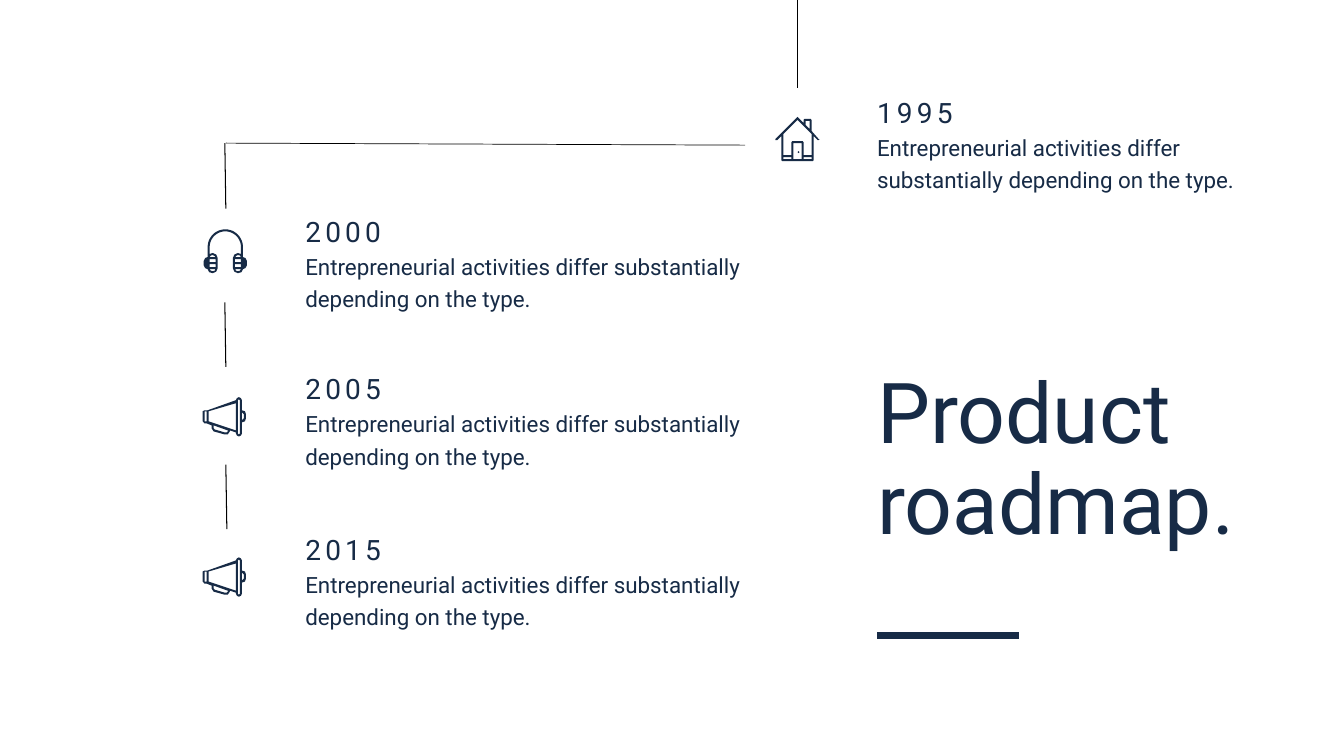
from dataclasses import dataclass
from math import cos, pi, sin

from lxml import etree
from pptx import Presentation
from pptx.dml.color import RGBColor
from pptx.enum.shapes import MSO_CONNECTOR
from pptx.enum.text import MSO_ANCHOR, MSO_AUTO_SIZE, PP_ALIGN
from pptx.oxml.ns import qn
from pptx.slide import Slide
from pptx.text.text import TextFrame
from pptx.util import Inches, Pt

STRAIGHT = MSO_CONNECTOR.STRAIGHT
TOP = MSO_ANCHOR.TOP
FIT_SHAPE = MSO_AUTO_SIZE.SHAPE_TO_FIT_TEXT
FIXED_SIZE = MSO_AUTO_SIZE.NONE
LEFT = PP_ALIGN.LEFT

COLORS = {"navy": "172B46", "black": "000000", "white": "FFFFFF"}
FONT = "Roboto"
DETAIL = "Entrepreneurial activities differ substantially depending on the type."
DETAIL_OFFSET = 0.33
ICON_UNIT = 0.01

Contour = list[tuple[float, float]]


@dataclass
class Milestone:
    year: str
    left: float
    top: float
    detail_width: float
    icon: list[Contour]
    icon_left: float
    icon_top: float


@dataclass
class Line:
    start: tuple[float, float]
    end: tuple[float, float]
    weight: float = 0.75
    color: str = "black"


def rectangle(left: float, top: float, right: float, bottom: float) -> Contour:
    return [(left, top), (right, top), (right, bottom), (left, bottom)]


def mirror(contour: Contour) -> Contour:
    return [(43 - x, y) for x, y in reversed(contour)]


def band_arc(radius: float) -> Contour:
    angles = [pi / 2 + step * pi / 24 for step in range(13)]
    return [(21.5 + radius * cos(angle), 18 - radius * sin(angle)) for angle in angles]


def headphones_icon() -> list[Contour]:
    cup = [(4, 28), (1.5, 29), (0, 32), (0, 36), (1.5, 39), (4, 40), (5.5, 43),
           (9, 44), (12.5, 42.5), (14, 39), (14, 29), (12.5, 25.5), (9, 24), (6, 25)]
    half = band_arc(17.5) + cup + band_arc(15.5)[::-1]
    slots = [
        rectangle(6, 30, 12, 33),
        rectangle(6, 35, 12, 38),
        [(9, 26), (11, 27), (11.5, 28), (6, 28), (7, 26.5)],
        [(9, 42), (7, 41.5), (6, 40), (11.5, 40), (11, 41.5)],
    ]
    return [half + mirror(half)] + slots + [mirror(slot) for slot in slots]


HOUSE = [
    [(43, 22), (36, 14), (36, 3), (35, 2), (29, 2), (28, 3), (28, 6), (23, 1),
     (22, 0), (21, 1), (0, 22), (0, 23), (1, 23), (2, 23), (6, 19), (6, 43),
     (7, 44), (37, 44), (38, 43), (38, 19), (42, 23), (43, 23), (44, 22)],
    [(36, 38), (28, 38), (28, 25), (27, 24), (17, 24), (16, 25), (16, 38),
     (8, 38), (8, 17), (22, 3), (36, 17)],
    rectangle(8, 40, 16, 42),
    rectangle(28, 40, 36, 42),
    rectangle(18, 26, 26, 42),
    [(30, 4), (34, 4), (34, 12), (30, 8)],
    [(23, 36), (24, 35), (23, 34), (22, 35)],
]
MEGAPHONE = [
    [(39, 13), (39, 3), (38, 1), (36, 0), (34, 1), (33, 3), (5, 13), (2, 13),
     (0, 14), (0, 24), (2, 26), (4, 26), (9, 28), (9, 31), (11, 34), (22, 37),
     (25, 37), (27, 34), (27, 33), (33, 35), (33, 36), (34, 38), (36, 39),
     (38, 38), (39, 36), (39, 25), (42, 24), (43, 21), (43, 17), (42, 14)],
    [(41, 21), (39, 23), (39, 15), (41, 17)],
    [(37, 36), (36, 37), (35, 36), (35, 3), (36, 2), (37, 3)],
    [(33, 33), (6, 24), (6, 14), (33, 6)],
    [(25, 34), (24, 35), (22, 35), (12, 32), (11, 31), (11, 28), (25, 33)],
    rectangle(2, 14, 4, 24),
]
MILESTONES = [
    Milestone("1995", 8.6, 0.9, 4.19, HOUSE, 7.69, 1.16),
    Milestone("2000", 2.93, 2.08, 4.53, headphones_icon(), 2.02, 2.27),
    Milestone("2005", 2.93, 3.64, 4.53, MEGAPHONE, 2.01, 3.94),
    Milestone("2015", 2.93, 5.23, 4.53, MEGAPHONE, 2.01, 5.53),
]
LINES = [
    Line((7.91, 0.87), (7.91, 0)),
    Line((2.24, 1.42), (7.39, 1.44), 0.5),
    Line((2.24, 2.07), (2.23, 1.42)),
    Line((2.24, 3.64), (2.23, 3)),
    Line((2.25, 5.25), (2.24, 4.61)),
    Line((8.7, 6.3), (10.11, 6.3), 5, "navy"),
]


def color(name: str) -> RGBColor:
    return RGBColor.from_string(COLORS[name])


def write_text(frame: TextFrame, text: str, size: float, line_spacing: float,
               tracking: int = 0) -> None:
    frame.text = text
    frame.vertical_anchor = TOP
    para = frame.paragraphs[0]
    para.alignment = LEFT
    para.line_spacing = line_spacing
    span = para.runs[0]
    span.font.name = FONT
    span.font.size = Pt(size)
    span.font.color.rgb = color("navy")
    if tracking:
        span.font._element.set("spc", str(tracking))


def add_text(page: Slide, left: float, top: float, width: float, height: float,
             text: str, size: float, line_spacing: float, wrap: bool,
             tracking: int = 0) -> None:
    box = page.shapes.add_textbox(Inches(left), Inches(top), Inches(width), Inches(height))
    box.text_frame.word_wrap = wrap
    box.text_frame.auto_size = FIT_SHAPE
    write_text(box.text_frame, text, size, line_spacing, tracking)


def add_icon(page: Slide, contours: list[Contour], left: float, top: float) -> None:
    placed = [[(Inches(left + x * ICON_UNIT), Inches(top + y * ICON_UNIT))
               for x, y in contour] for contour in contours]
    builder = page.shapes.build_freeform(*placed[0][0])
    for contour in placed:
        if contour is not placed[0]:
            builder.move_to(*contour[0])
        builder.add_line_segments(contour[1:], close=True)
    icon = builder.convert_to_shape()
    icon.shadow.inherit = False
    icon.fill.solid()
    icon.fill.fore_color.rgb = color("navy")
    icon.line.fill.background()


def add_line(page: Slide, line: Line) -> None:
    x1, y1 = line.start
    x2, y2 = line.end
    connector = page.shapes.add_connector(STRAIGHT, Inches(x1), Inches(y1), Inches(x2), Inches(y2))
    connector.line.color.rgb = color(line.color)
    connector.line.width = Pt(line.weight)
    etree.SubElement(connector._element.spPr, qn("a:effectLst"))


def add_milestone(page: Slide, item: Milestone) -> None:
    add_icon(page, item.icon, item.icon_left, item.icon_top)
    add_text(page, item.left, item.top, 1.02, 0.44, item.year, 20, 1.0, False, 300)
    add_text(page, item.left, item.top + DETAIL_OFFSET, item.detail_width, 0.72,
             DETAIL, 16, 1.2, True)


def main() -> None:
    deck = Presentation()
    deck.slide_width, deck.slide_height = Inches(13.33), Inches(7.5)
    page = deck.slides.add_slide(deck.slide_layouts[5])
    page.background.fill.solid()
    page.background.fill.fore_color.rgb = color("white")
    title = page.shapes.title
    title.left, title.top = Inches(8.6), Inches(3.63)
    title.width, title.height = Inches(6.07), Inches(2.1)
    title.text_frame.word_wrap = True
    title.text_frame.auto_size = FIXED_SIZE
    write_text(title.text_frame, "Product roadmap.", 60, 0.9)
    for line in LINES:
        add_line(page, line)
    for item in MILESTONES:
        add_milestone(page, item)
    deck.save("out.pptx")


if __name__ == "__main__":
    main()
